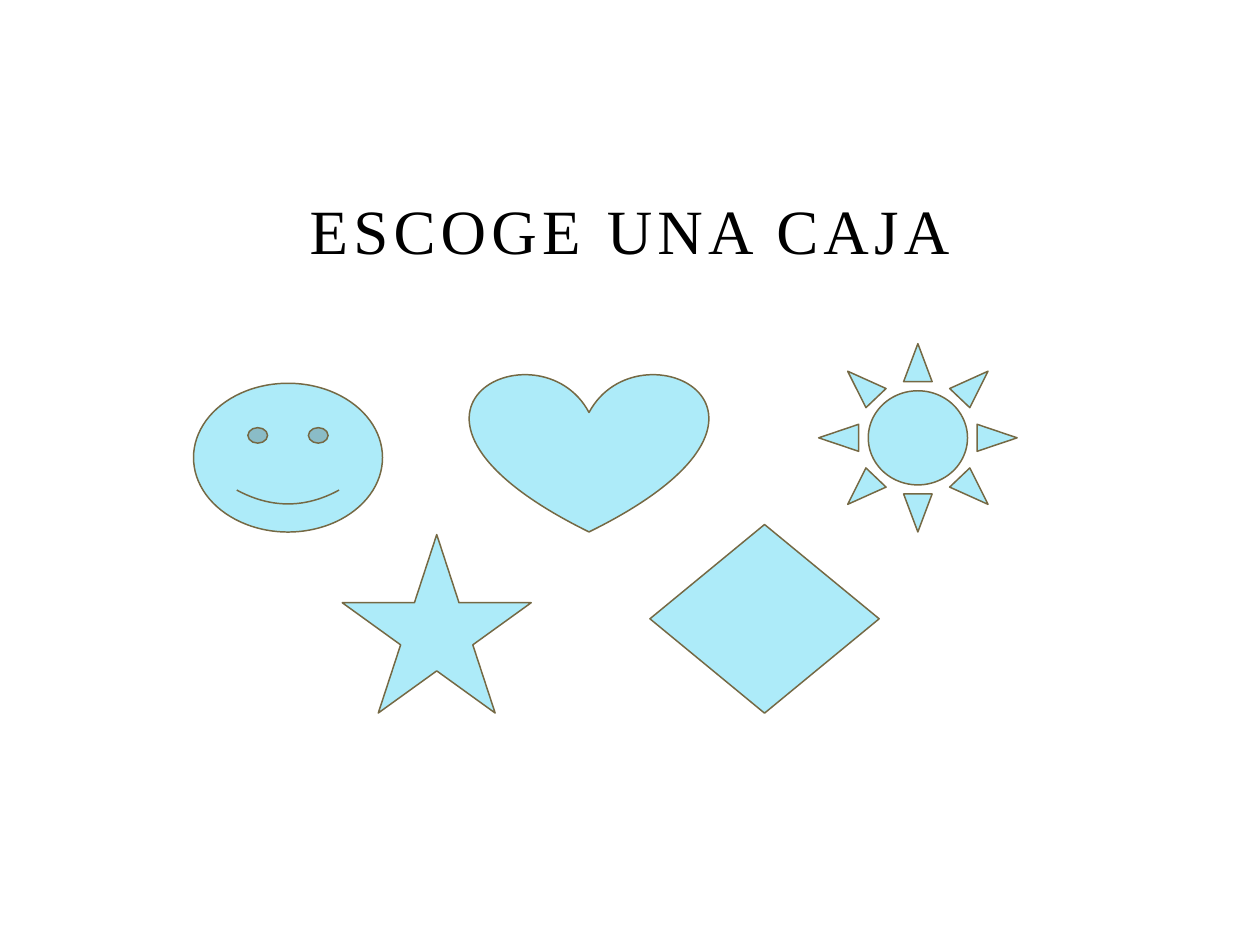
"""Build the "Escoge una caja" slide with its five shapes to choose from."""
from dataclasses import dataclass

from pptx import Presentation
from pptx.dml.color import RGBColor
from pptx.enum import shapes, text
from pptx.slide import Slide
from pptx.util import Pt

SKY = RGBColor(0xAD, 0xEB, 0xF9)
BRONZE = RGBColor(0x75, 0x69, 0x44)
BLACK = RGBColor(0, 0, 0)


@dataclass(frozen=True)
class Choice:
    figure: shapes.MSO_SHAPE
    left: float
    top: float
    width: float
    height: float


CHOICES = (
    Choice(shapes.MSO_SHAPE.SMILEY_FACE, 110.6, 219, 108, 85),
    Choice(shapes.MSO_SHAPE.HEART, 268.6, 213, 136, 91),
    Choice(shapes.MSO_SHAPE.SUN, 467.8, 196.4, 113.4, 107.6),
    Choice(shapes.MSO_SHAPE.STAR_5_POINT, 195.6, 305.5, 108, 102),
    Choice(shapes.MSO_SHAPE.FLOWCHART_DECISION, 371.4, 299.7, 131, 107.8),
)


def add_text(slide: Slide, wording: str, *, left: float, top: float,
             width: float, height: float, size: float, font: str,
             color: RGBColor, spacing: float = 0) -> None:
    box = slide.shapes.add_textbox(Pt(left), Pt(top), Pt(width), Pt(height))
    frame = box.text_frame
    frame.word_wrap = True
    frame.vertical_anchor = text.MSO_ANCHOR.BOTTOM
    line = frame.paragraphs[0]
    line.alignment = text.PP_ALIGN.CENTER
    run = line.add_run()
    run.text = wording
    run.font.size = Pt(size)
    run.font.name = font
    run.font.color.rgb = color
    run.font._element.set("spc", str(round(spacing * 100)))


def add_choice(slide: Slide, choice: Choice) -> None:
    figure = slide.shapes.add_shape(
        choice.figure, Pt(choice.left), Pt(choice.top),
        Pt(choice.width), Pt(choice.height))
    figure.shadow.inherit = False
    figure.fill.solid()
    figure.fill.fore_color.rgb = SKY
    figure.line.color.rgb = BRONZE
    figure.line.width = Pt(0.85)


def main() -> None:
    deck = Presentation()
    deck.slide_width, deck.slide_height = Pt(720), Pt(540)
    slide = deck.slides.add_slide(deck.slide_layouts[6])
    add_text(slide, "ESCOGE UNA CAJA", left=108, top=102.2, width=504,
             height=54, size=36, font="Times New Roman", color=BLACK, spacing=3)
    for choice in CHOICES:
        add_choice(slide, choice)
    deck.save("out.pptx")


if __name__ == "__main__":
    main()
